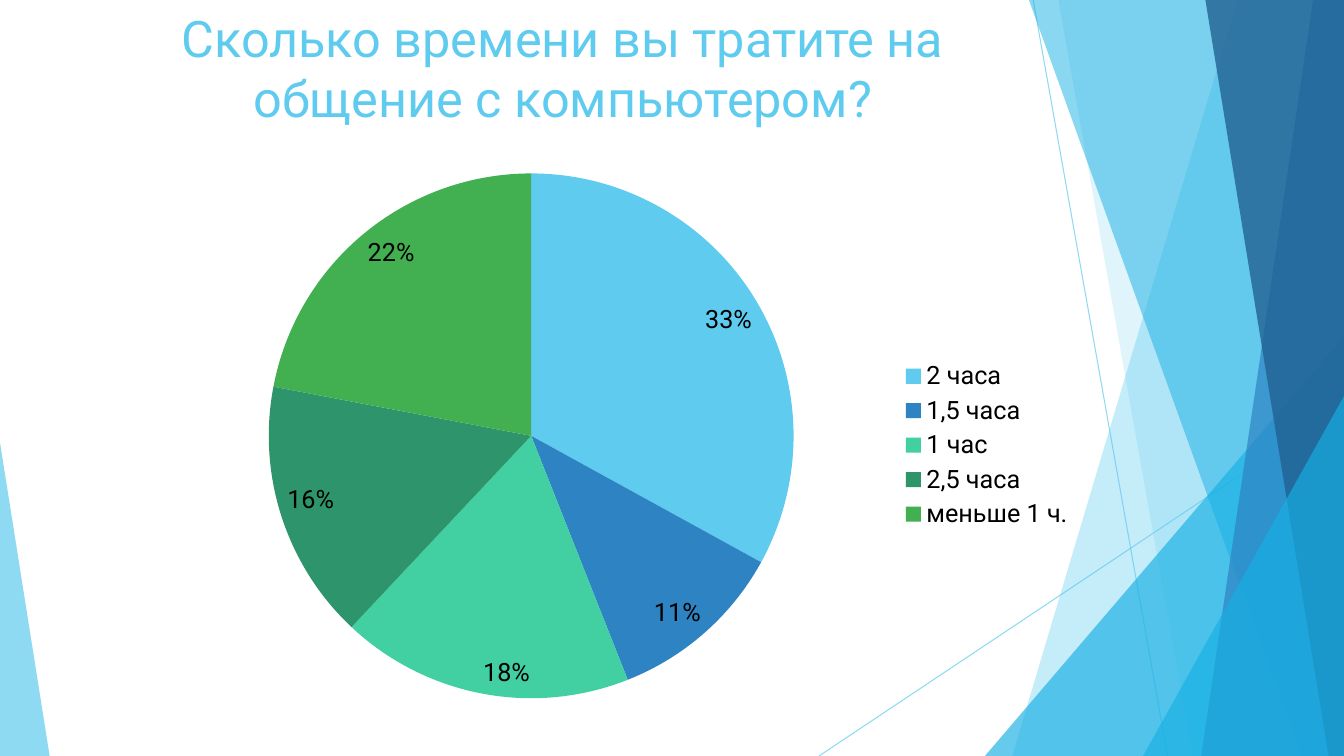
"""Builds a survey slide with a pie chart and a faceted background."""
from lxml.etree import SubElement
from pptx import Presentation
from pptx.chart.data import CategoryChartData
from pptx.dml.color import RGBColor as RGB
from pptx.enum.chart import XL_CHART_TYPE as CT, XL_LABEL_POSITION as LP, XL_LEGEND_POSITION as LG
from pptx.enum.shapes import MSO_CONNECTOR as CN, MSO_SHAPE as SH
from pptx.enum.text import MSO_ANCHOR as VA, PP_ALIGN as AL
from pptx.oxml import parse_xml
from pptx.oxml.ns import nsdecls, qn
from pptx.util import Pt

W, H = 960, 540
FONT = "Roboto"
COLORS = {
    "sky": "5FCBEF", "cyan": "17B0E4", "blue": "2E83C3", "navy": "226292",
    "mint": "42D0A2", "pine": "2E946B", "green": "42B051", "black": "000000",
}


def rgb(name):
    return RGB.from_string(COLORS[name])


def set_font(font, size, color):
    font.name, font.size = FONT, Pt(size)
    font.color.rgb = rgb(color)


def write(tf, text, size=18, color="black", align=AL.LEFT, anchor=VA.TOP):
    tf.word_wrap, tf.vertical_anchor = True, anchor
    p = tf.paragraphs[0]
    p.alignment = align
    r = p.add_run()
    r.text = text
    set_font(r.font, size, color)


def set_alpha(sp, percent):
    clr = next(sp._element.spPr.iter(qn("a:srgbClr")))
    SubElement(clr, qn("a:alpha")).set("val", str(percent * 1000))


class Deck:
    def __init__(self):
        self.prs = Presentation()
        self.prs.slide_width, self.prs.slide_height = Pt(W), Pt(H)
        self.s = self.prs.slides.add_slide(self.prs.slide_layouts[6])

    def paint(self, sp, color, alpha):
        sp.shadow.inherit = False
        sp.fill.solid()
        sp.fill.fore_color.rgb = rgb(color)
        sp.line.fill.background()
        set_alpha(sp, alpha)

    def line(self, x1, y1, x2, y2, color, alpha):
        cn = self.s.shapes.add_connector(CN.STRAIGHT, Pt(x1), Pt(y1), Pt(x2), Pt(y2))
        cn.line.color.rgb = rgb(color)
        cn.line.width = Pt(0.75)
        set_alpha(cn, alpha)
        SubElement(cn._element.spPr, qn("a:effectLst"))

    def band(self, top_x, bottom_x, color, alpha):
        fb = self.s.shapes.build_freeform(Pt(top_x), 0)
        corners = [(W, 0), (W, H), (bottom_x, H)]
        fb.add_line_segments([(Pt(x), Pt(y)) for x, y in corners], close=True)
        self.paint(fb.convert_to_shape(), color, alpha)

    def triangle(self, x, y, w, apex, color, alpha):
        sp = self.s.shapes.add_shape(SH.ISOSCELES_TRIANGLE, Pt(x), Pt(y), Pt(w), Pt(H - y))
        sp.adjustments[0] = apex
        self.paint(sp, color, alpha)

    def text(self, x, y, w, h, text, **fmt):
        write(self.s.shapes.add_textbox(Pt(x), Pt(y), Pt(w), Pt(h)).text_frame, text, **fmt)

    def pie(self, x, y, w, h, name, slices, plot_box):
        data = CategoryChartData(number_format="0%")
        data.categories = [label for label, _, _ in slices]
        data.add_series(name, [value for _, value, _ in slices])
        chart = self.s.shapes.add_chart(CT.PIE, Pt(x), Pt(y), Pt(w), Pt(h), data).chart
        set_font(chart.font, 18, "black")
        chart.has_title = False
        chart.has_legend = True
        chart.legend.position = LG.RIGHT
        chart.legend.include_in_layout = False
        plot = chart.plots[0]
        plot.vary_by_categories = True
        for i, (_, _, color) in enumerate(slices):
            fill = plot.series[0].points[i].format.fill
            fill.solid()
            fill.fore_color.rgb = rgb(color)
        plot.has_data_labels = True
        labels = plot.data_labels
        labels.show_value = True
        labels.number_format, labels.number_format_is_linked = "0%", False
        labels.position = LP.INSIDE_END
        set_font(labels.font, 18, "black")
        self.place_plot(chart, plot_box)

    def place_plot(self, chart, box):
        modes = [("layoutTarget", "inner"), ("xMode", "edge"), ("yMode", "edge")]
        parts = modes + list(zip("xywh", box))
        inner = "".join(f'<c:{tag} val="{val}"/>' for tag, val in parts)
        layout = parse_xml(
            f'<c:layout {nsdecls("c")}><c:manualLayout>{inner}</c:manualLayout></c:layout>')
        area = chart._chartSpace.find(".//" + qn("c:plotArea"))
        for old in area.findall(qn("c:layout")):
            area.remove(old)
        area.insert(0, layout)


def main():
    d = Deck()
    d.line(738, 0, 834, H, "sky", 70)
    d.line(W, 290, 585, H, "sky", 70)
    d.band(884, 723, "sky", 36)
    d.band(756, 852, "sky", 20)
    d.triangle(703.5, 240, 256.5, 1, "cyan", 66)
    d.band(735, 929.5, "cyan", 50)
    d.band(938, 858, "blue", 70)
    d.band(861, 949, "navy", 80)
    d.triangle(816.5, 283, 143.5, 1, "cyan", 66)
    d.triangle(0, 316, 35.5, 0, "sky", 70)
    d.text(63.5, 0, 677, 96, "Сколько времени вы тратите на общение с компьютером?",
           size=36, color="sky", align=AL.CENTER, anchor=VA.MIDDLE)
    slices = [
        ("2 часа", 0.33, "sky"),
        ("1,5 часа", 0.11, "blue"),
        ("1 час", 0.18, "mint"),
        ("2,5 часа", 0.16, "pine"),
        ("меньше 1 ч.", 0.22, "green"),
    ]
    d.pie(105, 96, 669.5, 444, "Series 1", slices, (0.13, 0.06, 0.56, 0.85))
    d.prs.save("out.pptx")


if __name__ == "__main__":
    main()
